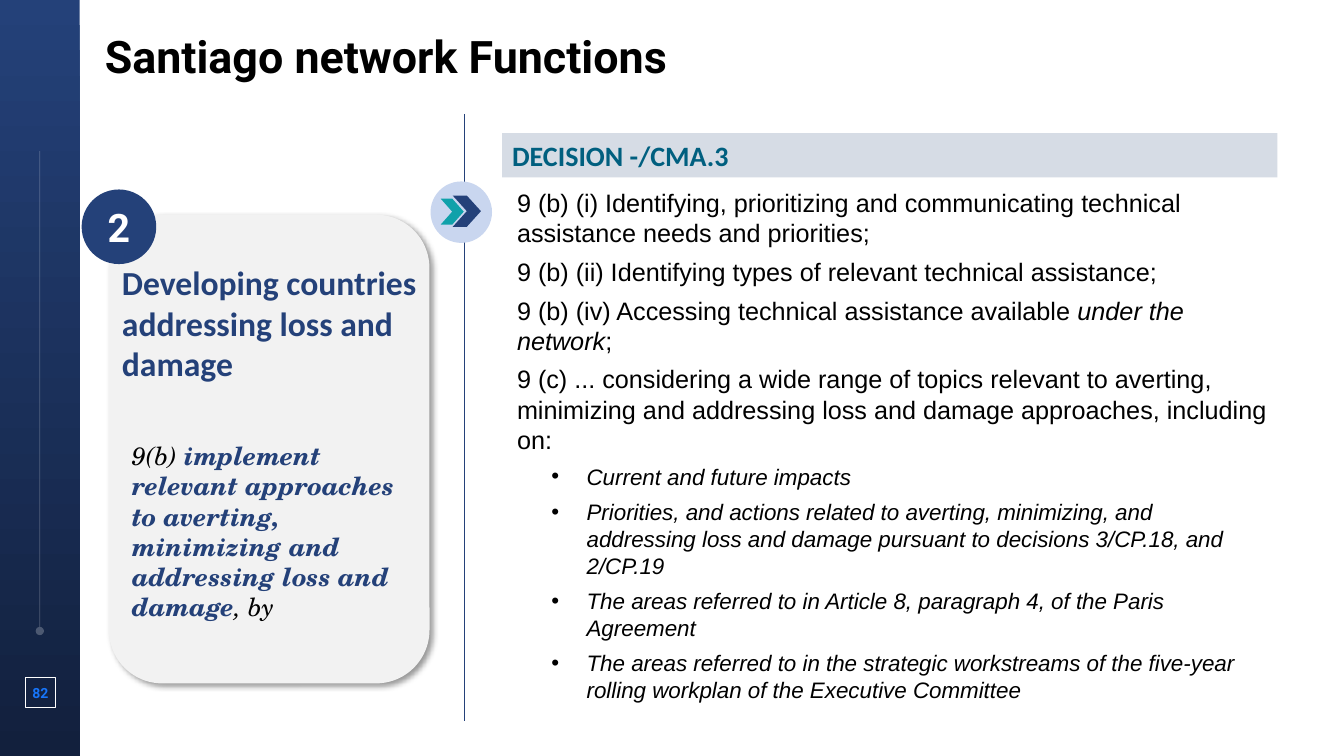
from lxml import etree
from pptx import Presentation
from pptx.dml.color import RGBColor
from pptx.enum import shapes, text
from pptx.oxml import ns
from pptx.util import Inches, Pt

COLORS = {
    "navy": "244179", "night": "12203D", "white": "FFFFFF", "black": "000000",
    "link": "1775F9", "card": "F2F2F2", "pale": "C9D6EF", "teal": "10A1AA",
    "band": "D6DCE5", "head": "005F7F",
}
SHAPE = shapes.MSO_SHAPE
MID, TOP = text.MSO_ANCHOR.MIDDLE, text.MSO_ANCHOR.TOP
LEFT, CENTER = text.PP_ALIGN.LEFT, text.PP_ALIGN.CENTER
POINTS = [
    ["9 (b) (i) Identifying, prioritizing and communicating technical "
     "assistance needs and priorities;"],
    ["9 (b) (ii) Identifying types of relevant technical assistance;"],
    ["9 (b) (iv) Accessing technical assistance available ",
     ("under the network", {"italic": True}), ";"],
    ["9 (c) ... considering a wide range of topics relevant to averting, "
     "minimizing and addressing loss and damage approaches, including on:"],
]
TOPICS = [
    "Current and future impacts",
    "Priorities, and actions related to averting, minimizing, and addressing "
    "loss and damage pursuant to decisions 3/CP.18, and 2/CP.19",
    "The areas referred to in Article 8, paragraph 4, of the Paris Agreement",
    "The areas referred to in the strategic workstreams of the five-year "
    "rolling workplan of the Executive Committee",
]


def rgb(name):
    return RGBColor.from_string(COLORS[name])


def add_xml(parent, tag, **attrs):
    node = etree.SubElement(parent, ns.qn(tag))
    for key, value in attrs.items():
        node.set(key, str(value))
    return node


def add_text(frame, runs, size=18, font="Arial", color="black", bold=False,
             italic=False, align=LEFT, anchor=TOP, inset=(0.1, 0.05),
             new=False, gap=0, bullet=False):
    """Write one paragraph; a run is a string or a (string, format) pair."""
    frame.word_wrap = True
    frame.vertical_anchor = anchor
    frame.margin_left = frame.margin_right = Inches(inset[0])
    frame.margin_top = frame.margin_bottom = Inches(inset[1])
    para = frame.add_paragraph() if new else frame.paragraphs[0]
    para.alignment = align
    para.space_before = Pt(gap if new else 0)
    para.space_after = Pt(gap)
    if bullet:
        props = para._p.get_or_add_pPr()
        props.set("marL", str(Inches(0.69)))
        props.set("indent", str(Inches(-0.35)))
        add_xml(props, "a:buFont", typeface="Arial")
        add_xml(props, "a:buChar", char="•")
    base = dict(bold=bold, italic=italic, color=color)
    for item in [runs] if isinstance(runs, str) else runs:
        words, extra = (item, {}) if isinstance(item, str) else item
        look = {**base, **extra}
        run = para.add_run()
        run.text = words
        run.font.name, run.font.size = font, Pt(size)
        run.font.bold, run.font.italic = look["bold"], look["italic"]
        run.font.color.rgb = rgb(look["color"])


def add_box(slide, x, y, w, h):
    place = [Inches(v) for v in (x, y, w, h)]
    return slide.shapes.add_textbox(*place).text_frame


def add_form(slide, kind, x, y, w, h, fill=None, line=None):
    form = slide.shapes.add_shape(kind, *[Inches(v) for v in (x, y, w, h)])
    form.shadow.inherit = False
    if fill:
        form.fill.solid()
        form.fill.fore_color.rgb = rgb(fill)
    else:
        form.fill.background()
    if line:
        form.line.color.rgb = rgb(line)
        form.line.width = Pt(0.5)
    else:
        form.line.fill.background()
    return form


def add_rule(slide, x, start, end, color):
    rule = slide.shapes.add_connector(
        shapes.MSO_CONNECTOR.STRAIGHT,
        Inches(x), Inches(start), Inches(x), Inches(end))
    rule.line.color.rgb = rgb(color)
    rule.line.width = Pt(0.5)
    add_xml(rule._element.spPr, "a:effectLst")
    return rule


def add_side(slide, x, y, w, h):
    # Gradient bar
    bar = add_form(slide, SHAPE.RECTANGLE, x, y, w, h, "navy")
    bar.fill.gradient()
    bar.fill.gradient_angle = 270
    for stop, name, spot in zip(bar.fill.gradient_stops, ("navy", "night"), (0, 1)):
        stop.color.rgb = rgb(name)
        stop.position = spot
    # Faint rule with a dot at its lower end
    rule = add_rule(slide, x + w / 2, y + 6.26, y + 1.5, "white")
    ln = rule.line._get_or_add_ln()
    add_xml(ln.find(".//" + ns.qn("a:srgbClr")), "a:alpha", val=24000)
    add_xml(ln, "a:headEnd", type="oval")
    # Page number
    page = add_form(slide, SHAPE.RECTANGLE, x + 0.25, y + 6.72, 0.3, 0.3, line="white")
    add_text(page.text_frame, "82", size=10, font="Roboto", color="link",
             bold=True, align=CENTER, anchor=MID, inset=(0, 0))


def add_card(slide, x, y, w, h):
    card = add_form(slide, SHAPE.ROUNDED_RECTANGLE, x, y, w, h, "card")
    effects = card._element.spPr.find(ns.qn("a:effectLst"))
    shade = add_xml(effects, "a:outerShdw", blurRad=Pt(4), dist=Pt(3),
                    dir=45 * 60000, algn="tl", rotWithShape=0)
    add_xml(add_xml(shade, "a:srgbClr", val=COLORS["black"]), "a:alpha", val=40000)
    # Quote and heading
    strong = {"bold": True, "color": "navy"}
    add_text(add_box(slide, x + 0.13, y + 2.19, 3, 1.92),
             ["9(b) ", ("implement relevant approaches to averting, minimizing "
                        "and addressing loss and damage", strong), ", by"],
             font="TeX Gyre Schola", italic=True)
    add_text(add_box(slide, x + 0.13, y + 0.47, 3, 1.62),
             "Developing countries addressing loss and damage",
             size=24, font="Calibri", color="navy", bold=True, inset=(0, 0))
    # Number badge
    badge = add_form(slide, SHAPE.OVAL, x - 0.27, y - 0.25, 0.74, 0.74, "navy")
    add_text(badge.text_frame, "2", size=28, font="Roboto", color="white",
             bold=True, align=CENTER, anchor=MID, inset=(0, 0))


def add_split(slide, x, y, h):
    add_rule(slide, x, y, y + h, "navy")
    # Double chevron on a disc
    add_form(slide, SHAPE.OVAL, x - 0.34, y + 0.67, 0.61, 0.61, "pale")
    add_form(slide, SHAPE.CHEVRON, x - 0.12, y + 0.81, 0.28, 0.31, "navy")
    add_form(slide, SHAPE.CHEVRON, x - 0.24, y + 0.84, 0.23, 0.26, "teal")


def add_points(slide, x, y, w, h):
    # Heading band
    band = add_form(slide, SHAPE.RECTANGLE, x, y, w, 0.44, "band")
    add_text(band.text_frame, "DECISION -/CMA.3", size=20, font="Calibri",
             color="head", bold=True, anchor=MID)
    # Clauses, then bulleted topics
    frame = add_box(slide, x + 0.05, y + 0.49, w - 0.05, h - 0.49)
    for i, runs in enumerate(POINTS):
        add_text(frame, runs, new=i > 0, gap=3)
    for topic in TOPICS:
        add_text(frame, topic, size=16, italic=True, new=True, gap=3, bullet=True)


def main():
    deck = Presentation()
    deck.slide_width, deck.slide_height = Inches(13.33), Inches(7.5)
    slide = deck.slides.add_slide(deck.slide_layouts[6])
    add_side(slide, 0, 0, 0.79, 7.5)
    add_text(add_box(slide, 1.04, 0.28, 11.86, 0.54), "Santiago network Functions",
             size=32, font="Roboto", bold=True, anchor=MID, inset=(0, 0))
    add_card(slide, 1.08, 2.13, 3.18, 4.65)
    add_split(slide, 4.61, 1.13, 6.02)
    add_points(slide, 4.98, 1.32, 7.69, 5.76)
    deck.save("out.pptx")


if __name__ == "__main__":
    main()
